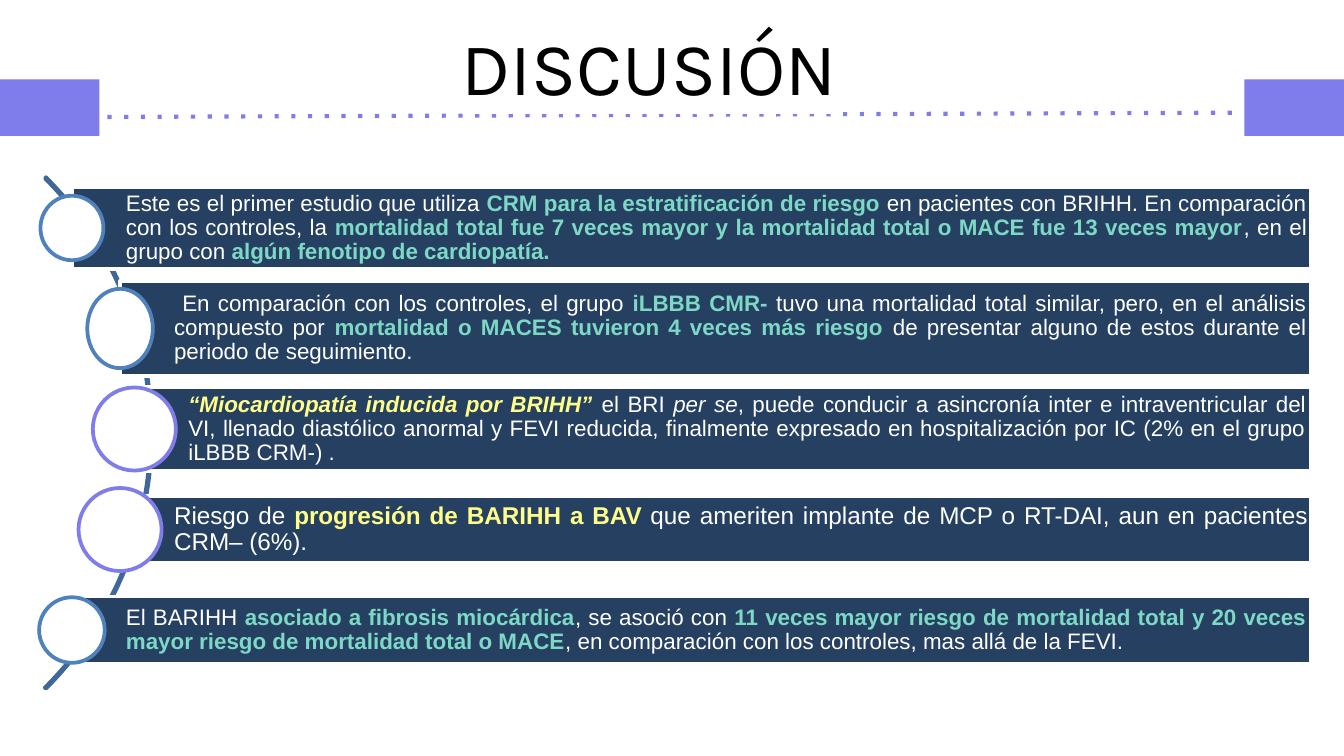
from lxml.etree import SubElement
from pptx import Presentation
from pptx.dml.color import RGBColor as RGB
from pptx.enum.shapes import MSO_CONNECTOR as Link, MSO_SHAPE as Kind
from pptx.enum.text import MSO_ANCHOR as Anchor, PP_ALIGN as Align
from pptx.oxml.ns import qn
from pptx.util import Cm, Pt


class Theme:
    lilac = RGB.from_string("7F7DEB")
    navy = RGB.from_string("254061")
    blue = RGB.from_string("4F81BD")
    steel = RGB.from_string("3F6797")
    mint = RGB.from_string("7DD8C5")
    lemon = RGB.from_string("FFFF89")
    white = RGB.from_string("FFFFFF")
    black = RGB.from_string("000000")
    head, body, large = Pt(40), Pt(12), Pt(13)
    rule, edge = Pt(2.25), Pt(2)


# Each run style: its colour and its font settings
STYLES = {
    "plain": (Theme.white, {}),
    "slant": (Theme.white, {"italic": True}),
    "mint": (Theme.mint, {"bold": True}),
    "lemon": (Theme.lemon, {"bold": True}),
    "quote": (Theme.lemon, {"bold": True, "italic": True}),
    "title": (Theme.black, {}),
}

# Bar left, bar height, circle width, circle height, circle line, type size, runs
ROWS = [
    (1.36, 1.55, 1.19, 1.22, Theme.blue, Theme.body, [
        ("Este es el primer estudio que utiliza ", "plain"),
        ("CRM para la estratificación de riesgo ", "mint"),
        ("en pacientes con BRIHH. En comparación con los controles, la ", "plain"),
        ("mortalidad total fue 7 veces mayor y la mortalidad total o MACE "
         "fue 13 veces mayor", "mint"),
        (", en el grupo con ", "plain"),
        ("algún fenotipo de cardiopatía.", "mint")]),
    (2.27, 1.8, 1.24, 1.5, Theme.blue, Theme.body, [
        (" En comparación con los controles, el grupo ", "plain"),
        ("iLBBB CMR- ", "mint"),
        ("tuvo una mortalidad total similar, pero, en el análisis "
         "compuesto por ", "plain"),
        ("mortalidad o MACES tuvieron 4 veces más riesgo", "mint"),
        (" de presentar alguno de estos durante el periodo de seguimiento.",
         "plain")]),
    (2.54, 1.6, 1.57, 1.57, Theme.lilac, Theme.body, [
        ("“Miocardiopatía inducida por BRIHH” ", "quote"),
        ("el BRI ", "plain"),
        ("per se", "slant"),
        (", puede conducir a asincronía inter e intraventricular del VI, "
         "llenado diastólico anormal y FEVI reducida, finalmente expresado en "
         "hospitalización por IC (2% en el grupo iLBBB CRM-) .", "plain")]),
    (2.27, 1.27, 1.57, 1.57, Theme.lilac, Theme.large, [
        ("Riesgo de ", "plain"),
        ("progresión de BARIHH a BAV ", "lemon"),
        ("que ameriten implante de MCP o RT-DAI, aun en pacientes CRM– (6%).",
         "plain")]),
    (1.36, 1.27, 1.24, 1.24, Theme.blue, Theme.body, [
        ("El BARIHH ", "plain"),
        ("asociado a fibrosis miocárdica", "mint"),
        (", se asoció con ", "plain"),
        ("11 veces mayor riesgo de mortalidad total y 20 veces mayor riesgo "
         "de mortalidad total o MACE", "mint"),
        (", en comparación con los controles, mas allá de la FEVI.", "plain")]),
]
FIRST, STEP, RIGHT = 4.31, 1.9, 24.78

deck = Presentation()
deck.slide_width, deck.slide_height = Cm(25.4), Cm(14.29)
shapes = deck.slides.add_slide(deck.slide_layouts[6]).shapes


def draw(kind, box, fill=None, edge=None):
    """Add a preset shape; box is left, top, width, height in cm."""
    shape = shapes.add_shape(kind, *map(Cm, box))
    shape.shadow.inherit = False
    if fill is None:
        shape.fill.background()
    else:
        shape.fill.solid()
        shape.fill.fore_color.rgb = fill
    if edge is None:
        shape.line.fill.background()
    else:
        shape.line.color.rgb = edge
        shape.line.width = Theme.edge
    return shape


def write(shape, runs, size, face, align, pads):
    """Fill a shape with one paragraph; pads are left and other insets in cm."""
    frame = shape.text_frame
    left, rest = map(Cm, pads)
    form = {"word_wrap": True, "vertical_anchor": Anchor.MIDDLE,
            "margin_left": left, "margin_right": rest,
            "margin_top": rest, "margin_bottom": rest}
    for key, value in form.items():
        setattr(frame, key, value)
    para = frame.paragraphs[0]
    para.alignment = align
    for text, style in runs:
        run = para.add_run()
        run.text = text
        color, extra = STYLES[style]
        run.font.color.rgb = color
        for key, value in {"size": size, "name": face, **extra}.items():
            setattr(run.font, key, value)
    return para


# Header: side blocks, dotted rule and title
for left in (0, 23.52):
    draw(Kind.RECTANGLE, (left, 1.5, 1.88, 1.07), Theme.lilac)

rule = shapes.add_connector(Link.STRAIGHT, Cm(2.03), Cm(2.21), Cm(23.37), Cm(2.13))
rule.line.color.rgb = Theme.lilac
rule.line.width = Theme.rule
props = rule._element.spPr
SubElement(props.find(qn("a:ln")), qn("a:prstDash"), val="dot")
SubElement(props, qn("a:effectLst"))

title = shapes.add_textbox(*map(Cm, (7.26, 0.15, 10.01, 2.18)))
para = write(title, [("DISCUSIÓN", "title")], Theme.head, "Karla",
             Align.CENTER, (0.25, 0.25))
# The white highlight hides the rule behind the title
font = para.runs[0]._r.rPr
light = SubElement(font, qn("a:highlight"))
SubElement(light, qn("a:srgbClr"), val=str(Theme.white))
font.find(qn("a:solidFill")).addnext(light)

# Arc that links the circles
arc = draw(Kind.BLOCK_ARC, (-10.8, 1.35, 13.67, 13.67), edge=Theme.steel)
for spot, value in enumerate((189, 27, 0.002)):
    arc.adjustments[spot] = value

# Bars, each with a circle centred on its left edge
for row, (left, high, wide, tall, edge, size, runs) in enumerate(ROWS):
    mid = FIRST + row * STEP
    bar = draw(Kind.RECTANGLE, (left, mid - high / 2, RIGHT - left, high),
               Theme.navy, Theme.white)
    para = write(bar, runs, size, "Arial", Align.JUSTIFY, (1.02, 0.08))
    para.line_spacing = 0.9
    draw(Kind.OVAL, (left - wide / 2, mid - tall / 2, wide, tall),
         Theme.white, edge)

deck.save("out.pptx")
